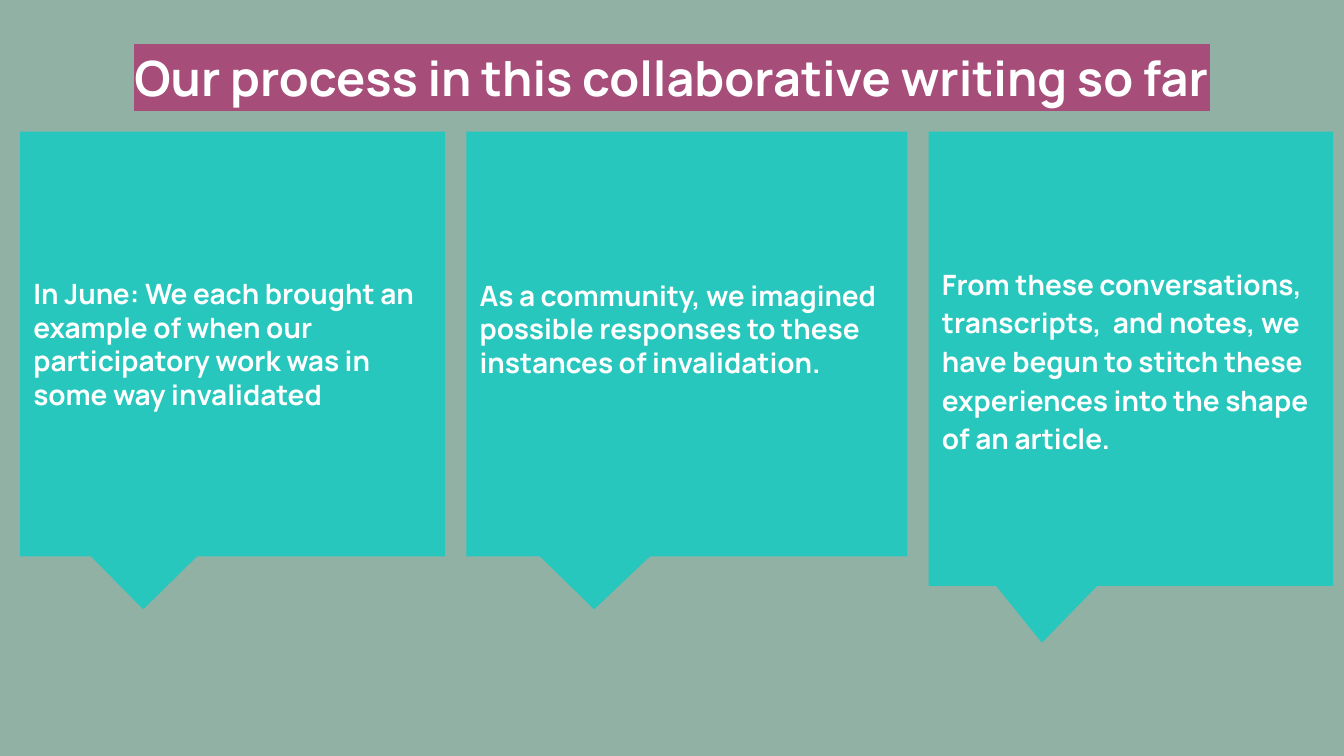
from lxml.etree import SubElement
from pptx import Presentation
from pptx.dml.color import RGBColor
from pptx.enum.shapes import MSO_SHAPE as Shape
from pptx.enum.text import MSO_ANCHOR as Anchor, PP_ALIGN as Align
from pptx.oxml.ns import qn
from pptx.util import Inches, Pt


def color(value):
    return RGBColor.from_string(value)


def write(box, text, size, align, spacing):
    frame = box.text_frame
    frame.word_wrap = True
    frame.margin_left = frame.margin_right = Inches(0.1)
    frame.margin_top = frame.margin_bottom = Inches(0.1)
    para = frame.paragraphs[0]
    para.alignment = align
    para.line_spacing = spacing
    para.font.name = "Manrope"
    para.font.size = Pt(size)
    para.font.bold = True
    para.font.color.rgb = color("FFFFFF")
    span = para.add_run()
    span.text = text
    return span


# A 16:9 page
deck = Presentation()
deck.slide_width = Inches(10)
deck.slide_height = deck.slide_width * 9 // 16
page = deck.slides.add_slide(deck.slide_layouts[6])
page.background.fill.solid()
page.background.fill.fore_color.rgb = color("91B1A5")

# Highlighted title
title = page.shapes.add_textbox(Inches(0.34), Inches(0.19), Inches(9.32), Inches(0.63))
span = write(title, "Our process in this collaborative writing so far", 26, Align.CENTER, 1.15)
highlight = SubElement(span.font._element, qn("a:highlight"))
SubElement(highlight, qn("a:srgbClr"), val="A64D79")

# Callouts in a row: width, height, tail shift, line spacing, bottom margin, text
steps = [
    (3.16, 3.16, -0.21, 1.0, 0.1,
     "In June: We each brought an example of when our participatory work was in some way invalidated"),
    (3.28, 3.16, -0.21, 1.0, 0.33,
     "As a community, we imagined possible responses to these instances of invalidation."),
    (3.01, 3.38, -0.22, 1.15, 0.1,
     "From these conversations, transcripts,  and notes, we have begun to stitch these "
     "experiences into the shape of an article."),
]
left, top, gap = 0.15, 0.98, 0.16
for width, height, shift, spacing, bottom, text in steps:
    callout = page.shapes.add_shape(
        Shape.RECTANGULAR_CALLOUT, Inches(left), Inches(top), Inches(width), Inches(height))
    callout.adjustments[0] = shift
    callout.adjustments[1] = 5 / 8
    callout.shadow.inherit = False
    callout.fill.solid()
    callout.fill.fore_color.rgb = color("27C7BD")
    callout.line.fill.background()
    write(callout, text, 15, Align.LEFT, spacing)
    callout.text_frame.margin_bottom = Inches(bottom)
    callout.text_frame.vertical_anchor = Anchor.MIDDLE
    left += width + gap

deck.save("out.pptx")
